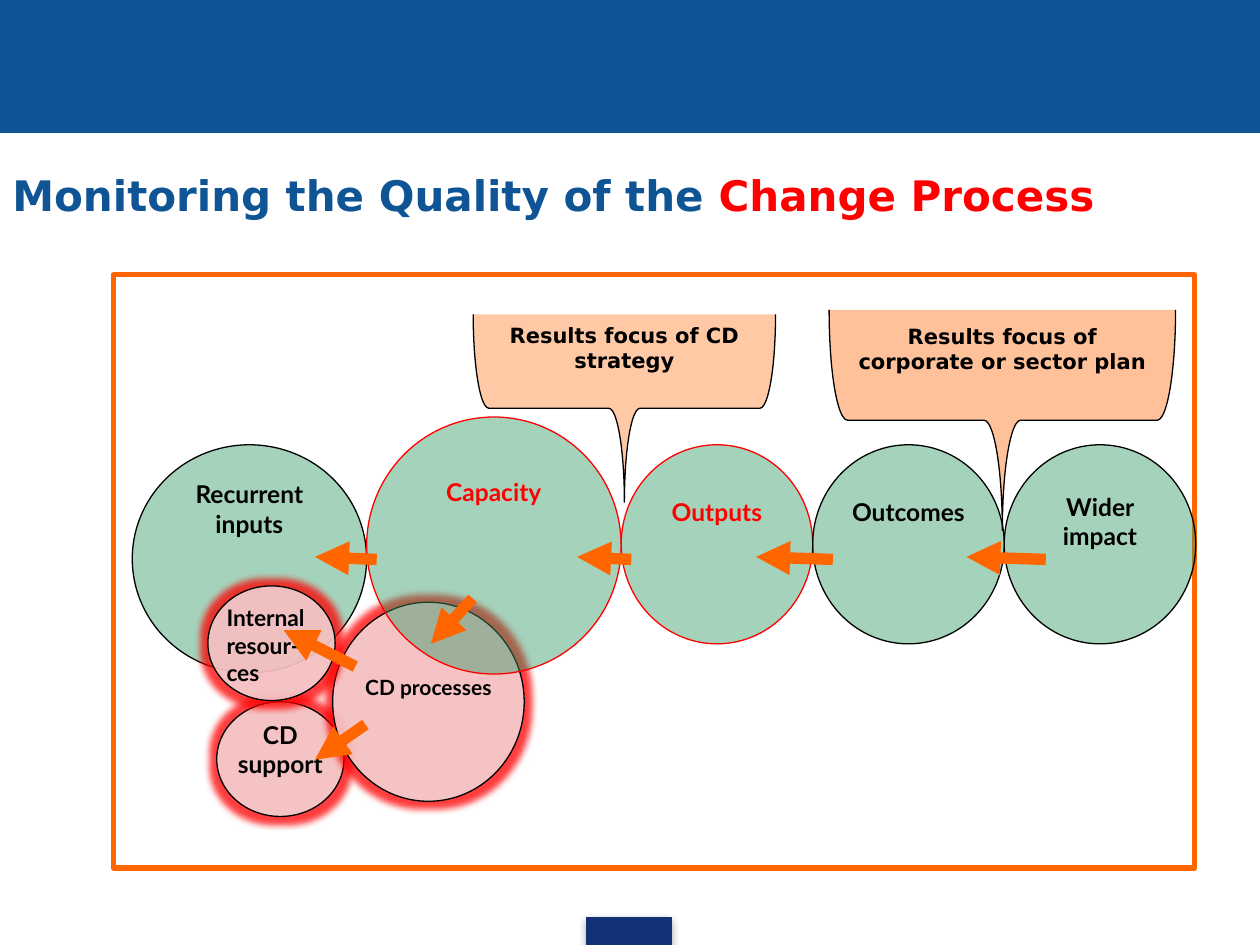
from pptx import Presentation
from pptx.dml.color import RGBColor
from pptx.enum.shapes import MSO_CONNECTOR, MSO_SHAPE
from pptx.enum.text import MSO_ANCHOR, PP_ALIGN
from pptx.oxml.ns import qn
from pptx.oxml.xmlchemy import OxmlElement
from pptx.util import Inches, Pt

RECT, OVAL, BRACE = MSO_SHAPE.RECTANGLE, MSO_SHAPE.OVAL, MSO_SHAPE.RIGHT_BRACE
LINE = MSO_CONNECTOR.STRAIGHT
TOP, MIDDLE = MSO_ANCHOR.TOP, MSO_ANCHOR.MIDDLE
LEFT, CENTER = PP_ALIGN.LEFT, PP_ALIGN.CENTER

HEX = {
    "blue": "0F5494", "navy": "133176", "red": "FF0000", "orange": "FF6600",
    "green": "339966", "grey": "F2F2F2", "black": "000000",
}
SANS, LATO = "DejaVu Sans", "Lato"


def rgb(name):
    return RGBColor.from_string(HEX[name])


def add_node(parent, tag, **attrs):
    node = OxmlElement(tag)
    for key, val in attrs.items():
        node.set(key, str(val))
    parent.append(node)
    return node


def add_effect(shape, tag, color, alpha, **attrs):
    """Put a glow or shadow into the shape's empty effect list."""
    effects = shape._element.spPr.find(qn("a:effectLst"))
    tint = add_node(add_node(effects, tag, **attrs), "a:srgbClr", val=HEX[color])
    add_node(tint, "a:alpha", val=alpha * 1000)


def add_form(slide, kind, box, fill=None, line="black", width=0.75, alpha=100):
    shape = slide.shapes.add_shape(kind, *map(Inches, box))
    if fill:
        shape.fill.solid()
        shape.fill.fore_color.rgb = rgb(fill)
        if alpha < 100:
            tint = shape._element.spPr.find(qn("a:solidFill"))[0]
            add_node(tint, "a:alpha", val=alpha * 1000)
    else:
        shape.fill.background()
    shape.line.color.rgb = rgb(line)
    shape.line.width = Pt(width)
    shape.shadow.inherit = False
    return shape


def write(shape, runs, size, font, align=CENTER, anchor=MIDDLE, **insets):
    """Fill the shape with one paragraph of (text, colour) runs."""
    frame = shape.text_frame
    frame.word_wrap = True
    frame.vertical_anchor = anchor
    for side, gap in insets.items():
        setattr(frame, "margin_" + side, Inches(gap))
    par = frame.paragraphs[0]
    par.alignment = align
    for text, color in runs:
        run = par.add_run()
        run.text = text
        style = {"size": Pt(size), "name": font, "bold": True}
        for key, val in style.items():
            setattr(run.font, key, val)
        run.font.color.rgb = rgb(color)


def add_stage(slide, text, box, drop, color="black"):
    """Green circle of the results chain; drop lowers its label."""
    shape = add_form(slide, OVAL, box, "green", color, alpha=44)
    write(shape, [(text, color)], 14, LATO, anchor=TOP,
          left=0, right=0, top=drop, bottom=0.01)


def add_change(slide, text, box, size, drop=0.01, align=CENTER):
    """Glowing circle of the change process."""
    shape = add_form(slide, OVAL, box, "grey", alpha=74)
    add_effect(shape, "a:glow", "red", 76, rad=Pt(8))
    write(shape, [(text, "black")], size, LATO, align, TOP,
          left=0, right=0, top=drop, bottom=0.01)


def add_arrow(slide, x1, y1, x2, y2):
    arrow = slide.shapes.add_connector(LINE, *map(Inches, (x1, y1, x2, y2)))
    arrow.line.color.rgb = rgb("orange")
    arrow.line.width = Pt(6.5)
    props = arrow._element.spPr
    add_node(props.find(qn("a:ln")), "a:tailEnd", type="triangle")
    add_node(props, "a:effectLst")


def add_brace(slide, text, box, alpha):
    """Brace that points down, with upright text."""
    brace = add_form(slide, BRACE, box, "orange", alpha=alpha)
    brace.rotation = 90
    write(brace, [(text, "black")], 12, SANS)
    brace.text_frame._txBody.bodyPr.set("vert", "vert270")


def main():
    deck = Presentation()
    deck.slide_width, deck.slide_height = Inches(10), Inches(7.5)
    slide = deck.slides.add_slide(deck.slide_layouts[6])

    add_form(slide, RECT, (0, 0, 10, 1.05), "blue", "blue")
    badge = add_form(slide, RECT, (4.66, 7.28, 0.67, 0.22), "navy", "navy")
    add_effect(badge, "a:outerShdw", "black", 35,
               blurRad=Pt(5), dist=Pt(1.8), dir=90 * 60000)
    title = slide.shapes.add_textbox(*map(Inches, (0, 1.17, 8.83, 0.75)))
    write(title, [("Monitoring the Quality of the ", "blue"),
                  ("Change Process", "red")], 24, SANS, LEFT)
    add_form(slide, RECT, (0.9, 2.18, 8.58, 4.71), line="orange", width=3)

    add_change(slide, "CD support", (1.72, 5.57, 1.01, 0.91), 14)
    add_change(slide, "CD processes", (2.64, 4.78, 1.52, 1.58), 12, drop=0.34)
    add_stage(slide, "Recurrent inputs", (1.05, 3.53, 1.86, 1.81), 0.01)
    add_stage(slide, "Capacity", (2.91, 3.31, 2.02, 2.04), 0.18, "red")
    results = [("Outputs", 0.18, "red"), ("Outcomes", 0.18, "black"),
               ("Wider impact", 0.14, "black")]
    for i, (text, drop, color) in enumerate(results):
        add_stage(slide, text, (4.93 + 1.52 * i, 3.53, 1.52, 1.58), drop, color)
    add_change(slide, "Internal resour-ces", (1.65, 4.65, 1.01, 0.91), 13,
               align=LEFT)

    for ends in [(2.9, 5.75, 2.5, 6.03), (3.75, 4.75, 3.42, 5.11),
                 (2.82, 5.29, 2.25, 5)]:
        add_arrow(slide, *ends)
    for start, end in [(2.99, 2.5), (8.3, 7.67), (6.61, 6), (5.01, 4.58)]:
        add_arrow(slide, start, 4.44, end, 4.42)

    add_brace(slide, "Results focus of corporate or sector plan",
              (7.08, 1.96, 1.75, 2.75), 40)
    add_brace(slide, "Results focus of CD strategy",
              (4.21, 2.04, 1.49, 2.4), 35)
    deck.save("out.pptx")


if __name__ == "__main__":
    main()
